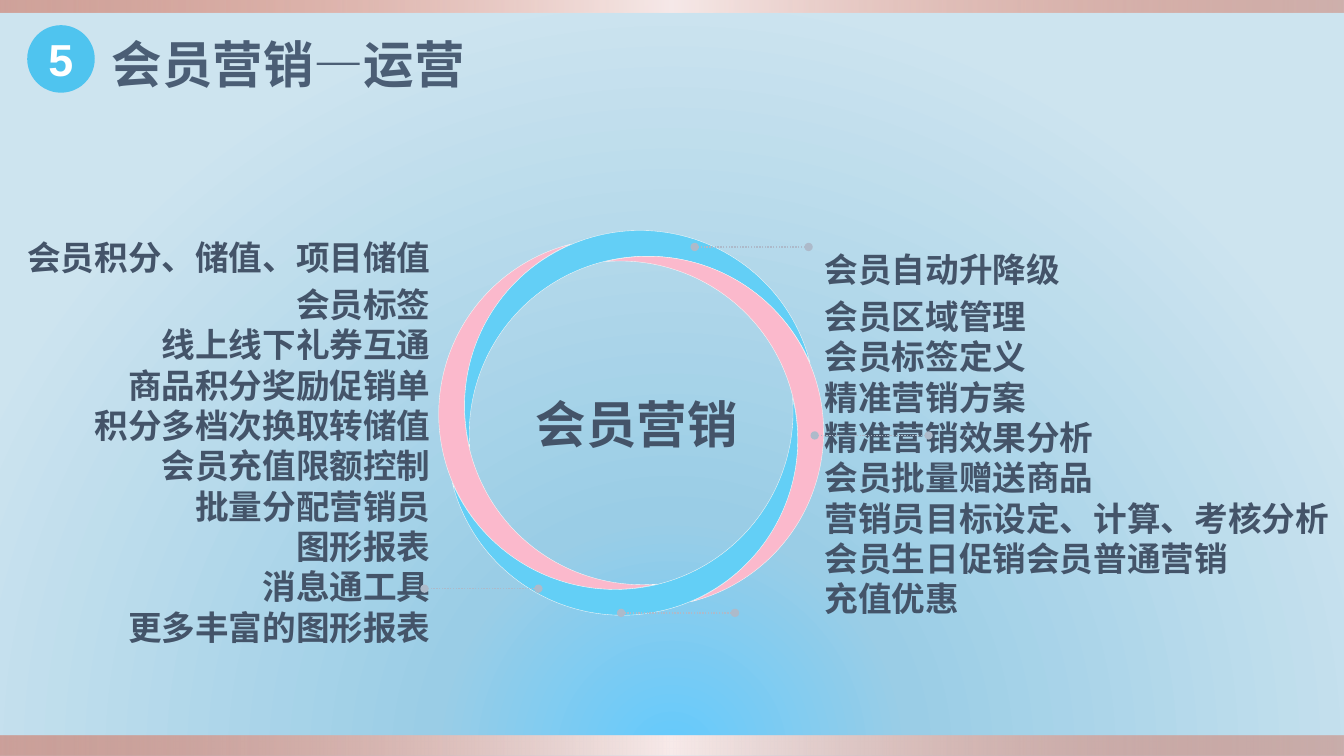
from math import cos, radians, sin

from lxml import etree
from pptx import Presentation
from pptx import util as u
from pptx.dml.color import RGBColor
from pptx.enum import shapes, text
from pptx.oxml.ns import qn

INK = "445469"
PINK, BLUE = "FBB9CC", "63CFF6"
RIGHT_ITEMS = [
    "会员自动升降级", "会员区域管理", "会员标签定义", "精准营销方案", "精准营销效果分析",
    "会员批量赠送商品", "营销员目标设定、计算、考核分析", "会员生日促销会员普通营销", "充值优惠",
]
LEFT_ITEMS = [
    "会员积分、储值、项目储值", "会员标签", "线上线下礼券互通", "商品积分奖励促销单",
    "积分多档次换取转储值", "会员充值限额控制", "批量分配营销员", "图形报表",
    "消息通工具", "更多丰富的图形报表",
]


def color(value):
    """Turn a hex string into a colour."""
    return RGBColor.from_string(value)


def add_node(parent, tag, **values):
    """Append a DrawingML element with the given attributes."""
    node = etree.SubElement(parent, qn(tag))
    for name, value in values.items():
        node.set(name, str(value))
    return node


def set_alpha(node, percent):
    """Give a colour element an opacity in percent."""
    add_node(node, "a:alpha", val=percent * 1000)


def paint_gradient(fill, element, stops, focus=None):
    """Fill with (position, colour, opacity) stops, linear or circular around a focus."""
    fill.gradient()
    gradient = element.find(".//" + qn("a:gradFill"))
    for child in list(gradient):
        gradient.remove(child)
    stop_list = add_node(gradient, "a:gsLst")
    for position, value, opacity in stops:
        stop = add_node(stop_list, "a:gs", pos=position * 1000)
        tone = add_node(stop, "a:srgbClr", val=value)
        if opacity < 100:
            set_alpha(tone, opacity)
    if focus:
        route = add_node(gradient, "a:path", path="circle")
        add_node(route, "a:fillToRect", **{side: share * 1000 for side, share in focus.items()})
    else:
        add_node(gradient, "a:lin", ang=0, scaled=0)


def place(shape, box):
    """Move a shape to a box of left, top, width and height in inches."""
    for name, value in zip(("left", "top", "width", "height"), box):
        setattr(shape, name, u.Inches(value))


def add_plain_shape(page, kind, box):
    """Add a preset shape without shadow or outline."""
    shape = page.shapes.add_shape(kind, *map(u.Inches, box))
    shape.shadow.inherit = False
    shape.line.fill.background()
    return shape


def write(frame, lines, size, tone, align, inset=0.0, anchor=text.MSO_ANCHOR.TOP):
    """Write bold, bullet-free lines into a text frame."""
    settings = {
        "word_wrap": True, "auto_size": text.MSO_AUTO_SIZE.NONE, "vertical_anchor": anchor,
        "margin_left": u.Inches(inset), "margin_right": u.Inches(inset),
        "margin_top": u.Inches(inset / 2), "margin_bottom": u.Inches(inset / 2),
    }
    for name, value in settings.items():
        setattr(frame, name, value)
    frame.text = "\n".join(lines)
    for index, para in enumerate(frame.paragraphs):
        properties = para._p.get_or_add_pPr()
        properties.set("marL", "0")
        properties.set("indent", "0")
        add_node(properties, "a:buNone")
        para.alignment = align
        para.space_before = u.Pt(size * 0.2 if index == 1 else 0)
        for span in para.runs:
            for name, value in {"name": "Arial", "size": u.Pt(size), "bold": True}.items():
                setattr(span.font, name, value)
            span.font.color.rgb = color(tone)


def draw_backdrop(page, box):
    """Paint the radial background and the bands along the top and bottom of the box."""
    left, top, width, height = box
    stops = [(0, "63CAFD", 100), (31, "9ACDE6", 100), (100, "CDE4EF", 100)]
    paint_gradient(page.background.fill, page.element, stops, {"l": 50, "t": 150, "r": 50, "b": 0})
    for band_top, depth in ((top + height - 0.2, 0.2), (top, 0.12)):
        band = add_plain_shape(page, shapes.MSO_SHAPE.RECTANGLE, (left, band_top, width, depth))
        stops = [(0, "D16349", 50), (50, "F7EAE9", 100), (100, "D16349", 40)]
        paint_gradient(band.fill, band._element, stops)


def draw_heading(page, box, number, title):
    """Place the numbered disc and the slide title."""
    left, top, width, height = box
    disc = add_plain_shape(page, shapes.MSO_SHAPE.OVAL, (left, top, 0.67, 0.67))
    disc.fill.solid()
    disc.fill.fore_color.rgb = color("00B0F0")
    set_alpha(disc._element.spPr.find(".//" + qn("a:srgbClr")), 61)
    write(disc.text_frame, [number], 32, "FFFFFF", text.PP_ALIGN.CENTER,
          anchor=text.MSO_ANCHOR.MIDDLE)
    place(page.shapes.title, (left + 0.74, top + 0.03, width - 0.74, height))
    write(page.shapes.title.text_frame, [title], 36, "4B5E75", text.PP_ALIGN.LEFT, 0.1)


def draw_ring(page, box, label):
    """Turn four moons around the centre of the box and label the middle."""
    left, top, width, height = box
    center_x, center_y = left + width / 2, top + height / 2
    orbit, moon_width, moon_height = 1.02, 1.74, 3.48
    for turn, tone in enumerate((PINK, BLUE, PINK, BLUE)):
        angle = radians(173 + 90 * turn)
        moon_left = center_x + orbit * cos(angle) - moon_width / 2
        moon_top = center_y + orbit * sin(angle) - moon_height / 2
        moon = add_plain_shape(page, shapes.MSO_SHAPE.MOON,
                               (moon_left, moon_top, moon_width, moon_height))
        moon.adjustments[0] = 0.152
        moon.rotation = (345.9 + 90 * turn) % 360
        moon.fill.solid()
        moon.fill.fore_color.rgb = color(tone)
        moon.line.color.rgb = color("F8F8F8")
        moon.line.width = u.Pt(0.25)
    caption = page.shapes.add_textbox(*map(u.Inches, (center_x - 1.1, center_y - 0.34, 2.31, 0.71)))
    write(caption.text_frame, [label], 36, INK, text.PP_ALIGN.CENTER, 0.1)


def draw_leader(page, left, top, length=1.13):
    """Draw a dotted horizontal line with a dot at each end."""
    ends = map(u.Inches, (left + length, top, left, top))
    leader = page.shapes.add_connector(shapes.MSO_CONNECTOR.STRAIGHT, *ends)
    leader.line.color.rgb = color("ADBACA")
    leader.line.width = u.Pt(1)
    outline = leader.line._get_or_add_ln()
    for tag, name in (("a:prstDash", "val"), ("a:headEnd", "type"), ("a:tailEnd", "type")):
        add_node(outline, tag, **{name: "sysDot" if name == "val" else "oval"})
    add_node(leader._element.spPr, "a:effectLst")


def draw_list(holder, box, lines, align):
    """Fill a body placeholder with one list."""
    place(holder, box)
    write(holder.text_frame, lines, 24, INK, align)


def main():
    """Build and save the slide."""
    deck = Presentation()
    deck.slide_width, deck.slide_height = u.Inches(13.33), u.Inches(7.5)
    page = deck.slides.add_slide(deck.slide_layouts[3])
    draw_backdrop(page, (0, 0, 13.33, 7.5))
    draw_ring(page, (4.36, 2.29, 3.8, 3.81), "会员营销")
    draw_list(page.placeholders[1], (0.1, 2.35, 4.17, 4.12), LEFT_ITEMS, text.PP_ALIGN.RIGHT)
    draw_list(page.placeholders[2], (8.18, 2.47, 5.15, 3.72), RIGHT_ITEMS, text.PP_ALIGN.LEFT)
    for left, top in ((4.21, 5.84), (6.89, 2.45), (8.08, 4.32), (6.16, 6.08)):
        draw_leader(page, left, top)
    draw_heading(page, (0.27, 0.25, 13.06, 1.18), "5", "会员营销—运营")
    deck.save("out.pptx")


if __name__ == "__main__":
    main()
